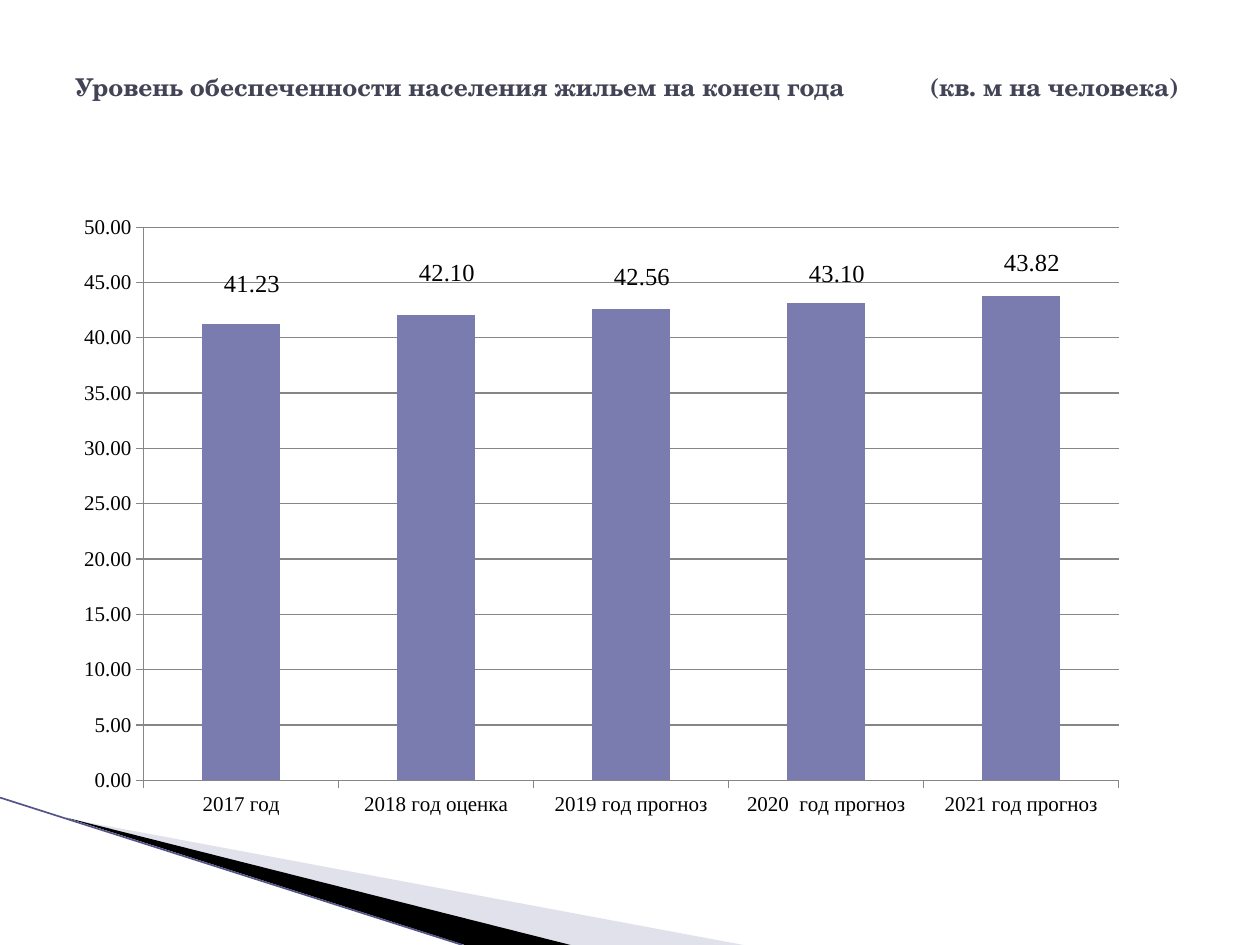
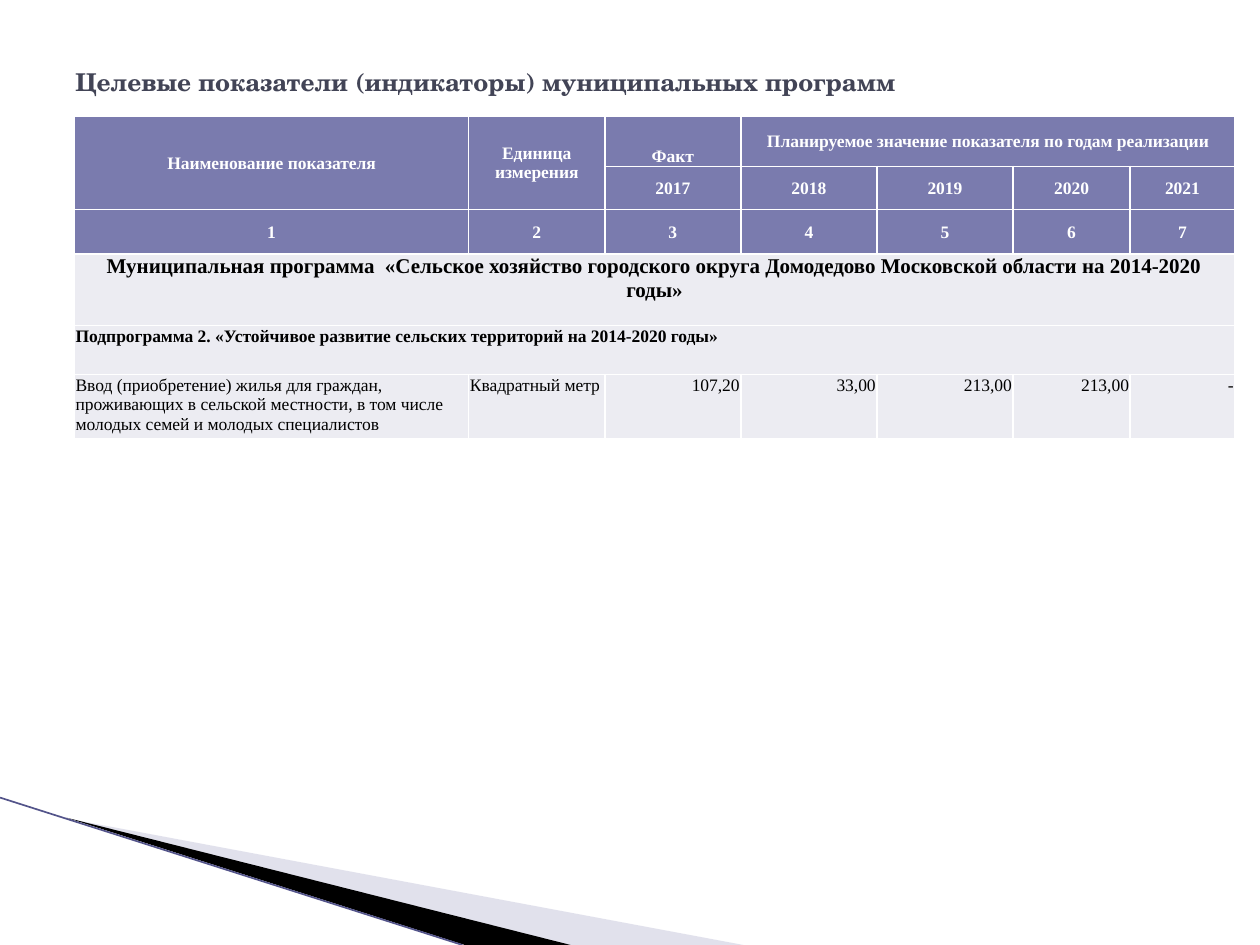
"""Builds two slides on housing supply: a column chart and a table of target indicators."""
from lxml.etree import SubElement
from pptx import Presentation
from pptx.chart.data import CategoryChartData
from pptx.dml.color import RGBColor
from pptx.enum.chart import XL_CHART_TYPE, XL_LABEL_POSITION, XL_TICK_MARK
from pptx.enum.shapes import MSO_CONNECTOR
from pptx.enum.text import MSO_ANCHOR, PP_ALIGN
from pptx.oxml import parse_xml
from pptx.oxml.ns import nsdecls, qn
from pptx.util import Inches, Pt

COLORS = {
    "title": "424456",
    "accent": "7A7BAE",
    "edge": "53548A",
    "wedge": "B6B6D1",
    "black": "000000",
    "white": "FFFFFF",
    "row": "ECECF2",
    "grid": "868686",
}
TITLE_FONT = "TeX Gyre Schola"
BODY_FONT = "Times New Roman"
NUMBER_FORMAT = "#,##0.00"
NO_LEADER_LINES = (
    f"<c:extLst {nsdecls('c')}><c:ext uri=\"{{CE6537A1-D6FC-4f65-9D91-7224C49458BB}}\" "
    'xmlns:c15="http://schemas.microsoft.com/office/drawing/2012/chart">'
    '<c15:showLeaderLines val="0"/></c:ext></c:extLst>')

HOUSING = {
    "2017 год": 41.23,
    "2018 год оценка": 42.10,
    "2019 год прогноз": 42.56,
    "2020  год прогноз": 43.10,
    "2021 год прогноз": 43.82,
}
LABEL_SHIFTS = [(0.01, -0.43), (0.01, -0.44), (0.01, -0.43), (0.01, -0.43), (0.01, -0.44)]

COLUMN_WIDTHS = [31.3, 10.8, 10.8, 10.8, 10.8, 9.3, 8.3]
ROW_HEIGHTS = [4, 3.2, 3.5, 5.7, 3.9, 4.7]
HEADER_ROWS = 3
INDICATORS = [
    ["Наименование показателя", "Единица измерения", "Факт",
     "Планируемое значение показателя по годам реализации", "", "", ""],
    ["", "", "2017", "2018", "2019", "2020", "2021"],
    [str(number) for number in range(1, 8)],
    ["Муниципальная программа  «Сельское хозяйство городского округа Домодедово "
     "Московской области на 2014-2020 годы»"] + [""] * 6,
    ["Подпрограмма 2. «Устойчивое развитие сельских территорий на 2014-2020 годы»"] + [""] * 6,
    ["Ввод (приобретение) жилья для граждан, проживающих в сельской местности, "
     "в том числе молодых семей и молодых специалистов",
     "Квадратный метр", "107,20", "33,00", "213,00", "213,00", "-"],
]
MERGES = [((0, 0), (1, 0)), ((0, 1), (1, 1)), ((0, 3), (0, 6)),
          ((3, 0), (3, 6)), ((4, 0), (4, 6))]


def color(name):
    """Return the named colour."""
    return RGBColor.from_string(COLORS[name])


def grid(*units):
    """Turn columns or rows of the 100 by 75 grid into lengths."""
    return [Inches(unit / 10) for unit in units]


def manual_layout(**parts):
    """Return a chart layout element with the given parts."""
    children = "".join(f'<c:{name} val="{value}"/>' for name, value in parts.items())
    return parse_xml(f"<c:layout {nsdecls('c')}><c:manualLayout>{children}"
                     "</c:manualLayout></c:layout>")


class SlideWriter:
    """Holds the deck style and the current slide."""

    def __init__(self):
        """Start an empty deck."""
        self.deck = Presentation()
        self.deck.slide_width, self.deck.slide_height = grid(100, 75)
        self.page = None

    def font(self, font, size, name="black", face=BODY_FONT, bold=False):
        """Style a font."""
        font.name, font.size, font.bold = face, Pt(size), bold
        font.color.rgb = color(name)

    def add_page(self):
        """Add a slide with the corner decoration."""
        self.page = self.deck.slides.add_slide(self.deck.slide_layouts[6])
        self.wedge([(5.5, 65), (59, 75), (45.2, 75)], "wedge", 40)
        self.wedge([(5.3, 64.9), (45.3, 75), (36.9, 75)], "black")
        self.edge((0, 63.3), (36.7, 75))

    def wedge(self, corners, name, opacity=100):
        """Draw a filled outline through the corners."""
        points = [grid(*corner) for corner in corners]
        builder = self.page.shapes.build_freeform(*points[0])
        builder.add_line_segments(points[1:], close=True)
        shape = builder.convert_to_shape()
        shape.shadow.inherit = False
        shape.line.fill.background()
        shape.fill.solid()
        shape.fill.fore_color.rgb = color(name)
        if opacity < 100:
            tint = shape.fill._xPr.find(".//" + qn("a:srgbClr"))
            SubElement(tint, qn("a:alpha"), val=str(opacity * 1000))

    def edge(self, start, end):
        """Draw a thin line."""
        line = self.page.shapes.add_connector(MSO_CONNECTOR.STRAIGHT, *grid(*start, *end))
        line.line.color.rgb = color("edge")
        line.line.width = Pt(0.95)
        SubElement(line._element.spPr, qn("a:effectLst"))

    def title(self, text, height, tab=None):
        """Write the slide title, with an optional tab stop in columns."""
        box = self.page.shapes.add_textbox(*grid(5, 3, 90, height))
        frame = box.text_frame
        frame.word_wrap = True
        frame.vertical_anchor = MSO_ANCHOR.MIDDLE
        frame.text = text
        paragraph = frame.paragraphs[0]
        if tab:
            stops = SubElement(paragraph._p.get_or_add_pPr(), qn("a:tabLst"))
            SubElement(stops, qn("a:tab"), pos=str(grid(tab)[0]), algn="l")
        for span in paragraph.runs:
            self.font(span.font, 14, "title", TITLE_FONT, True)

    def column_chart(self, values, shifts, place):
        """Draw a stacked column chart with shifted labels."""
        data = CategoryChartData(number_format=NUMBER_FORMAT)
        data.categories = list(values)
        data.add_series("Series 1", list(values.values()))
        chart = self.page.shapes.add_chart(
            XL_CHART_TYPE.COLUMN_STACKED, *grid(*place), data).chart
        chart.has_legend = chart.has_title = False
        self.font(chart.font, 18, face="Courier New")
        self.axes(chart)
        plot = chart.plots[0]
        plot.gap_width, plot.overlap, plot.vary_by_categories = 150, 100, False
        series = plot.series[0]
        series.format.fill.solid()
        series.format.fill.fore_color.rgb = color("accent")
        self.value_labels(series, shifts)
        area = chart._chartSpace.find(".//" + qn("c:plotArea"))
        for layout in area.findall(qn("c:layout")):
            area.remove(layout)
        area.insert(0, manual_layout(layoutTarget="inner", xMode="edge", yMode="edge",
                                     x=0.075, y=0.037, w=0.905, h=0.887))

    def value_labels(self, series, shifts):
        """Place the value labels above the columns, without leader lines."""
        labels = series.data_labels
        labels.show_value = True
        labels.number_format, labels.number_format_is_linked = NUMBER_FORMAT, False
        self.font(labels.font, 14)
        for index in range(len(shifts)):
            label = series.points[index].data_label
            label.position = XL_LABEL_POSITION.CENTER
            self.font(label.font, 14)
        for item, (x, y) in zip(labels._element.findall(qn("c:dLbl")), shifts):
            item.insert(1, manual_layout(x=x, y=y))
        for leader in labels._element.findall(qn("c:showLeaderLines")):
            leader.set("val", "0")
        labels._element.append(parse_xml(NO_LEADER_LINES))

    def axes(self, chart):
        """Style both chart axes and the gridlines."""
        scale = chart.value_axis
        scale.minimum_scale, scale.maximum_scale, scale.major_unit = 0, 50, 5
        scale.has_major_gridlines = True
        scale.tick_labels.number_format = NUMBER_FORMAT
        scale.tick_labels.number_format_is_linked = False
        for axis in (scale, chart.category_axis):
            axis.major_tick_mark = XL_TICK_MARK.OUTSIDE
            self.font(axis.tick_labels.font, 12)
        for holder in (scale, chart.category_axis, scale.major_gridlines):
            holder.format.line.color.rgb = color("grid")
            holder.format.line.width = Pt(0.75)

    def table(self, rows, widths, heights, merges, corner):
        """Draw the table of indicators."""
        size = grid(*corner, sum(widths), sum(heights))
        table = self.page.shapes.add_table(len(rows), len(widths), *size).table
        for column, width in zip(table.columns, grid(*widths)):
            column.width = width
        for row, height in zip(table.rows, grid(*heights)):
            row.height = height
        for row, texts in enumerate(rows):
            for column, text in enumerate(texts):
                self.cell(table.cell(row, column), text, row, column)
        for first, last in merges:
            table.cell(*first).merge(table.cell(*last))

    def cell(self, cell, text, row, column):
        """Fill and style one cell by its place in the table."""
        header, program = row < HEADER_ROWS, row == HEADER_ROWS
        size = 12 if program else 10
        cell.margin_left = cell.margin_right = Inches(0.1 if program else 0.01)
        cell.margin_top, cell.margin_bottom = Inches(0.01), 0
        cell.vertical_anchor = MSO_ANCHOR.MIDDLE if header else MSO_ANCHOR.TOP
        if text == "Факт":
            cell.vertical_anchor = MSO_ANCHOR.BOTTOM
        for side in "LRTB":
            border = SubElement(cell._tc.get_or_add_tcPr(), qn(f"a:ln{side}"), w=str(Pt(1)))
            fill = SubElement(border, qn("a:solidFill"))
            SubElement(fill, qn("a:srgbClr"), val=COLORS["white"])
        cell.fill.solid()
        cell.fill.fore_color.rgb = color("accent" if header else "row")
        cell.text_frame.text = text
        paragraph = cell.text_frame.paragraphs[0]
        if header or program:
            paragraph.alignment = PP_ALIGN.CENTER
        else:
            paragraph.alignment = PP_ALIGN.RIGHT if column > 1 else PP_ALIGN.LEFT
        SubElement(paragraph._p, qn("a:endParaRPr"), sz=str(size * 100))
        for span in paragraph.runs:
            self.font(span.font, size, "white" if header else "black",
                      bold=row < len(INDICATORS) - 1)


def main():
    """Build and save the deck."""
    writer = SlideWriter()
    writer.add_page()
    writer.column_chart(HOUSING, LABEL_SHIFTS, (5, 16.2, 85.5, 49.5))
    writer.title("Уровень обеспеченности населения жильем на конец года\t(кв. м на человека)",
                 7.7, tab=67.8)
    writer.add_page()
    writer.title("Целевые показатели (индикаторы) муниципальных программ", 6.9)
    writer.table(INDICATORS, COLUMN_WIDTHS, ROW_HEIGHTS, MERGES, (5.9, 9.2))
    writer.deck.save("out.pptx")


if __name__ == "__main__":
    main()
